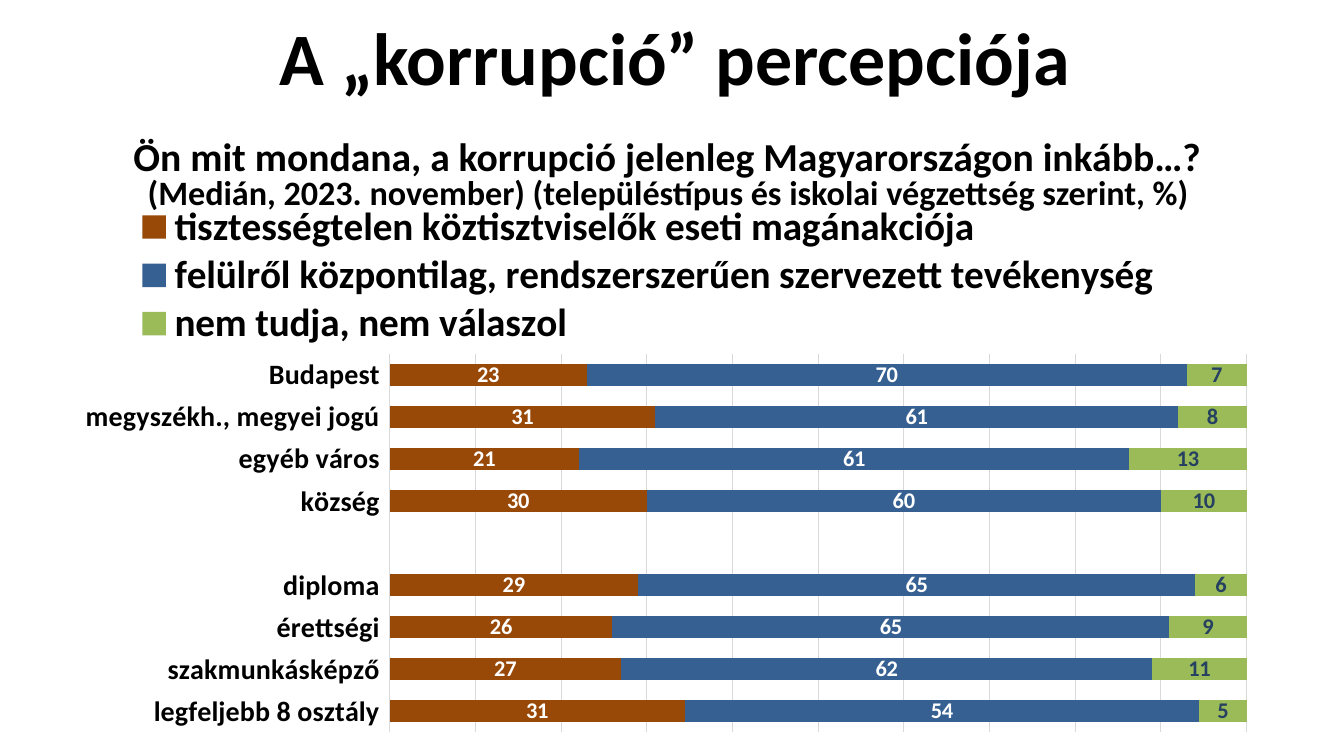
from lxml import etree
from pptx import Presentation
from pptx.chart.data import CategoryChartData
from pptx.dml.color import RGBColor
from pptx.enum.chart import (XL_CHART_TYPE, XL_LABEL_POSITION, XL_LEGEND_POSITION,
                             XL_TICK_LABEL_POSITION, XL_TICK_MARK)
from pptx.enum.text import MSO_ANCHOR, PP_ALIGN
from pptx.oxml.ns import qn
from pptx.util import Inches, Pt

FONT = "Calibri"
TITLE_ONLY = 5
CENTER = PP_ALIGN.CENTER
MIDDLE = MSO_ANCHOR.MIDDLE
STACKED = XL_CHART_TYPE.BAR_STACKED_100
NO_TICK = XL_TICK_MARK.NONE
NO_LABELS = XL_TICK_LABEL_POSITION.NONE
LOW_LABELS = XL_TICK_LABEL_POSITION.LOW
LABEL_CENTER = XL_LABEL_POSITION.CENTER
LEGEND_TOP = XL_LEGEND_POSITION.TOP

BLACK, GREY, GRID, WHITE = "000000", "595959", "D9D9D9", "FFFFFF"

CATEGORIES = ["legfeljebb 8 osztály", "szakmunkásképző", "érettségi", "diploma", "",
              "község", "egyéb város", "megyszékh., megyei jogú", "Budapest"]
# name, values, bar colour, label colour
SERIES = [
    ("tisztességtelen köztisztviselők eseti magánakciója",
     [31, 27, 26, 29, None, 30, 21, 31, 23], "984807", WHITE),
    ("felülről központilag, rendszerszerűen szervezett tevékenység",
     [54, 62, 65, 65, None, 60, 61, 61, 70], "376092", WHITE),
    ("nem tudja, nem válaszol",
     [5, 11, 9, 6, None, 10, 13, 8, 7], "9BBB59", "254061"),
]


def rgb(color):
    return RGBColor.from_string(color)


def set_font(font, size, color=BLACK, bold=True):
    font.name = FONT
    font.size = Pt(size)
    font.bold = bold
    font.color.rgb = rgb(color)


def set_line(line, color):
    line.color.rgb = rgb(color)
    line.width = Pt(0.75)


def add_lines(sp, lines, spacing=None):
    """Centre the (text, size) lines in one paragraph."""
    tf = sp.text_frame
    tf.word_wrap = True
    tf.vertical_anchor = MIDDLE
    p = tf.paragraphs[0]
    p.alignment = CENTER
    if spacing:
        p.line_spacing = spacing
    for i, (text, size) in enumerate(lines):
        if i:
            p.add_line_break()
        r = p.add_run()
        r.text = text
        set_font(r.font, size)


def add_title(s, text):
    sp = s.shapes.title
    sp.left, sp.top = Inches(0.36), Inches(0.15)
    sp.width, sp.height = Inches(12.67), Inches(0.81)
    add_lines(sp, [(text, 52.8)])


def add_question(s, lines):
    sp = s.shapes.add_textbox(Inches(0.22), Inches(1.33), Inches(12.81), Inches(0.84))
    add_lines(sp, lines, 0.8)


def set_layout(element, before, x, y, w, h, inner=False):
    """Place a chart part by fractions of the chart area."""
    for old in element.findall(qn("c:layout")):
        element.remove(old)
    layout = etree.Element(qn("c:layout"))
    manual = etree.SubElement(layout, qn("c:manualLayout"))
    parts = [("layoutTarget", "inner")] if inner else []
    parts += [("xMode", "edge"), ("yMode", "edge"), ("x", x), ("y", y), ("w", w), ("h", h)]
    for tag, value in parts:
        etree.SubElement(manual, qn("c:" + tag)).set("val", str(value))
    element.find(qn(before)).addprevious(layout)


def format_axes(chart):
    cat = chart.category_axis
    cat.major_tick_mark = cat.minor_tick_mark = NO_TICK
    cat.tick_label_position = LOW_LABELS
    set_font(cat.tick_labels.font, 20)
    set_line(cat.format.line, GRID)

    val = chart.value_axis
    val.major_tick_mark = val.minor_tick_mark = NO_TICK
    val.tick_label_position = NO_LABELS
    set_font(val.tick_labels.font, 12, GREY, False)
    val.format.line.fill.background()
    val.has_major_gridlines = True
    set_line(val.major_gridlines.format.line, GRID)


def format_series(plot):
    for series, (_, _, fill, label) in zip(plot.series, SERIES):
        series.invert_if_negative = False
        series.format.fill.solid()
        series.format.fill.fore_color.rgb = rgb(fill)
        labels = series.data_labels
        labels.show_value = True
        labels.position = LABEL_CENTER
        set_font(labels.font, 16, label)


def add_opinion_chart(s):
    data = CategoryChartData()
    data.categories = CATEGORIES
    for name, values, _, _ in SERIES:
        data.add_series(name, values)
    chart = s.shapes.add_chart(STACKED, Inches(0.36), Inches(1.19),
                               Inches(12.01), Inches(6.29), data).chart
    chart.has_title = False
    set_font(chart.font, 10, bold=False)
    plot = chart.plots[0]
    plot.gap_width, plot.overlap = 90, 100
    plot.vary_by_categories = False
    format_axes(chart)
    format_series(plot)

    # Legend and plot area
    chart.has_legend = True
    legend = chart.legend
    legend.position = LEGEND_TOP
    legend.include_in_layout = False
    set_font(legend.font, 28)
    root = chart.element
    set_layout(root.find(".//" + qn("c:legend")), "c:overlay", 0.08, 0.13, 0.85, 0.23)
    set_layout(root.find(".//" + qn("c:plotArea")), "c:barChart",
               0.292, 0.369, 0.708, 0.597, inner=True)


def main():
    prs = Presentation()
    prs.slide_width, prs.slide_height = Inches(13.33), Inches(7.5)
    s = prs.slides.add_slide(prs.slide_layouts[TITLE_ONLY])
    add_title(s, "A „korrupció” percepciója")
    add_question(s, [
        ("Ön mit mondana, a korrupció jelenleg Magyarországon inkább…?", 28.3),
        ("(Medián, 2023. november) (településtípus és iskolai végzettség szerint, %)", 24.4),
    ])
    add_opinion_chart(s)
    prs.save("out.pptx")


if __name__ == "__main__":
    main()
